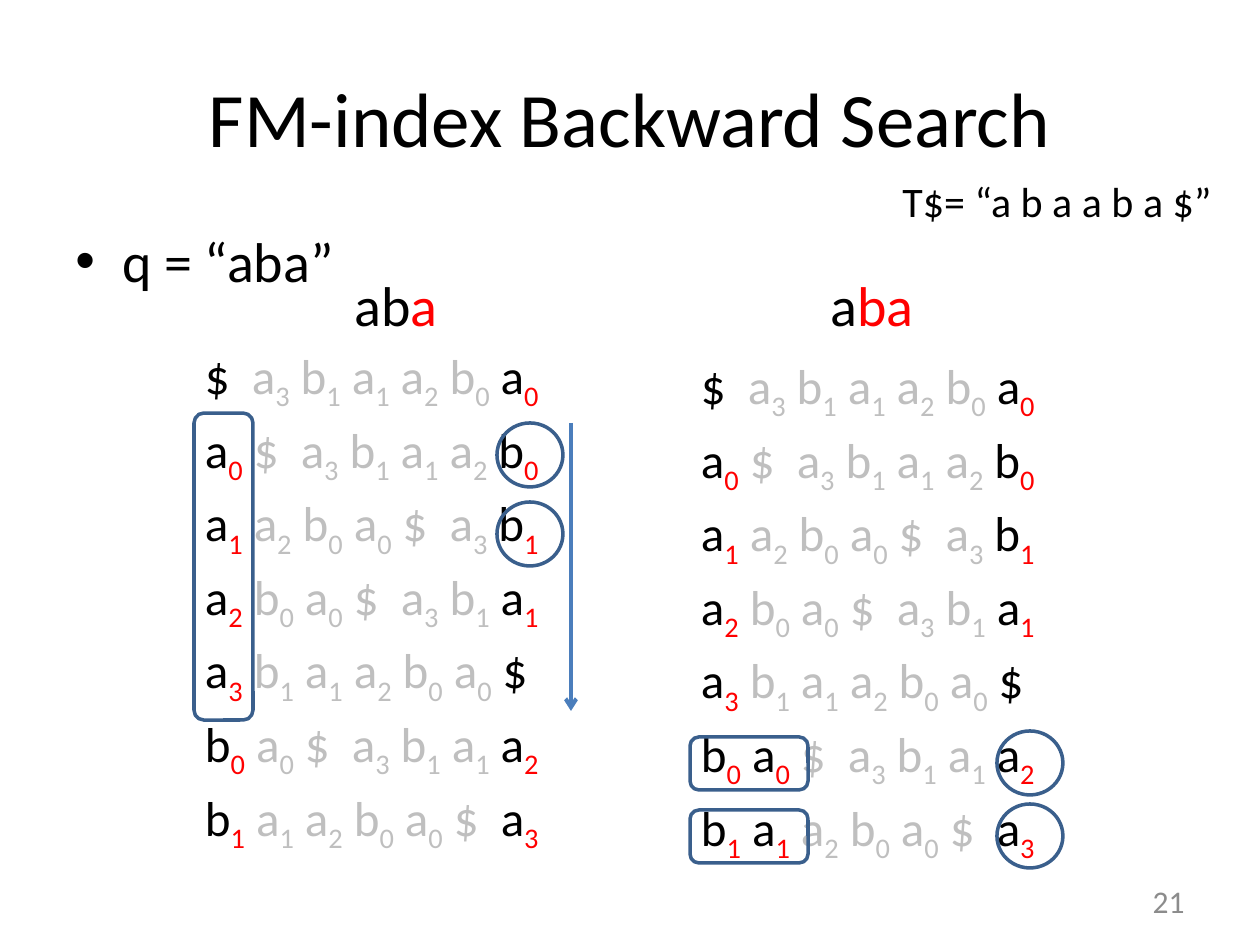
"""Build the FM-index backward search slide."""
import dataclasses

import lxml.etree
import pptx
import pptx.dml.color
import pptx.enum.shapes
import pptx.enum.text
import pptx.oxml.ns
import pptx.util

EMU_PER_PX = 914400 / 126
LEFT = pptx.enum.text.PP_ALIGN.LEFT
RIGHT = pptx.enum.text.PP_ALIGN.RIGHT
CENTER = pptx.enum.text.PP_ALIGN.CENTER
MIDDLE = pptx.enum.text.MSO_ANCHOR.MIDDLE
ROUNDED = pptx.enum.shapes.MSO_SHAPE.ROUNDED_RECTANGLE
OVAL = pptx.enum.shapes.MSO_SHAPE.OVAL

ROTATION = ["$", "a3", "b1", "a1", "a2", "b0", "a0"]
FIRST_COLUMN = ["$", "a0", "a1", "a2", "a3", "b0", "b1"]


@dataclasses.dataclass(frozen=True)
class Theme:
    """Colours, font and type sizes of the slide."""
    font: str = "Calibri"
    ink: str = "000000"
    accent: str = "FF0000"
    faded: str = "BFBFBF"
    number: str = "8C8C8C"
    border: str = "FFFFFF"
    outline: str = "3A5F8C"
    arrow: str = "4B7EBC"
    title: int = 44
    body: int = 32
    matrix: int = 28
    caption: int = 24
    footer: int = 18


THEME = Theme()


def px(length):
    """Turn pixels into EMU."""
    return pptx.util.Emu(round(length * EMU_PER_PX))


def rgb(colour):
    """Turn a hex string into a colour."""
    return pptx.dml.color.RGBColor.from_string(colour)


def add_element(parent, tag, **attributes):
    """Append a DrawingML element to its parent."""
    return lxml.etree.SubElement(parent, pptx.oxml.ns.qn(tag), attributes)


def place(shape, left, top, width, height):
    """Move and size a shape."""
    shape.left, shape.top = px(left), px(top)
    shape.width, shape.height = px(width), px(height)


def style_paragraph(paragraph, size, colour=THEME.ink, align=LEFT):
    """Set the font and alignment of a paragraph."""
    paragraph.alignment = align
    paragraph.font.name = THEME.font
    paragraph.font.size = pptx.util.Pt(size)
    paragraph.font.color.rgb = rgb(colour)


def add_run(paragraph, text, colour, subscript=False):
    """Add a coloured run, lowered where it is a subscript."""
    run = paragraph.add_run()
    run.text = text
    run.font.color.rgb = rgb(colour)
    if subscript:
        run.font._element.set("baseline", "-25000")


def add_title(slide, text):
    """Fill and format the title placeholder."""
    title = slide.shapes.title
    place(title, 63, 38, 1134, 157)
    title.text_frame.text = text
    title.text_frame.vertical_anchor = MIDDLE
    style_paragraph(title.text_frame.paragraphs[0], THEME.title, align=CENTER)


def add_text(slide, box, text, size, colour=THEME.ink, align=LEFT, wrap=True):
    """Add a text box of one paragraph and return the box."""
    shape = slide.shapes.add_textbox(*map(px, box))
    shape.text_frame.word_wrap = wrap
    paragraph = shape.text_frame.paragraphs[0]
    paragraph.text = text
    style_paragraph(paragraph, size, colour, align)
    return shape


def add_bullet(slide, box, text):
    """Add a bulleted line of body text."""
    paragraph = add_text(slide, box, text, THEME.body).text_frame.paragraphs[0]
    paragraph.space_before = pptx.util.Pt(6)
    properties = paragraph._p.get_or_add_pPr()
    properties.set("marL", str(px(47)))
    properties.set("indent", str(-px(47)))
    add_element(properties, "a:buFont", typeface="Arial")
    add_element(properties, "a:buChar", char="•")


def add_query(slide, left, pending, matched):
    """Add the query with its matched suffix highlighted."""
    shape = add_text(slide, (left, 264, 110, 80), pending, THEME.body, wrap=False)
    add_run(shape.text_frame.paragraphs[0], matched, THEME.accent)


def write_rotation(paragraph, first, matched):
    """Write one rotation, with its matched prefix and last symbol dark."""
    start = ROTATION.index(first)
    symbols = ROTATION[start:] + ROTATION[:start]
    gap = ""
    for position, symbol in enumerate(symbols):
        dark = position < matched or position == len(symbols) - 1
        letter, rank = symbol[0], symbol[1:]
        add_run(paragraph, gap + letter, THEME.ink if dark else THEME.faded)
        if rank:
            add_run(paragraph, rank, THEME.accent if dark else THEME.faded,
                    subscript=True)
        gap = " " if rank else "  "


def format_cell(cell):
    """Give a cell thin margins, no fill and white borders."""
    cell.vertical_anchor = MIDDLE
    cell.margin_left = cell.margin_top = cell.margin_right = px(1)
    cell.margin_bottom = 0
    properties = cell._tc.get_or_add_tcPr()
    for side in ("L", "R", "T", "B"):
        line = add_element(properties, f"a:ln{side}", w="12700")
        fill = add_element(line, "a:solidFill")
        add_element(fill, "a:srgbClr", val=THEME.border)
    add_element(properties, "a:noFill")


def add_matrix(slide, left, top, matched):
    """Add the sorted rotations; matched maps a first letter to a prefix length."""
    rows = len(FIRST_COLUMN)
    table = slide.shapes.add_table(
        rows, 1, px(left), px(top), px(397), px(515)).table
    table.first_row = table.horz_banding = False
    for cell, first in zip(table.iter_cells(), FIRST_COLUMN):
        format_cell(cell)
        paragraph = cell.text_frame.paragraphs[0]
        style_paragraph(paragraph, THEME.matrix)
        write_rotation(paragraph, first, matched.get(first[0], 1))


def add_marker(slide, kind, box):
    """Add an unfilled outline around matched symbols."""
    marker = slide.shapes.add_shape(kind, *map(px, box))
    marker.shadow.inherit = False
    marker.fill.background()
    marker.line.color.rgb = rgb(THEME.outline)
    marker.line.width = pptx.util.Pt(2)


def add_arrow(slide, x, top, bottom):
    """Add a downward scan arrow."""
    arrow = slide.shapes.add_connector(
        pptx.enum.shapes.MSO_CONNECTOR.STRAIGHT,
        px(x), px(top), px(x), px(bottom))
    arrow.line.color.rgb = rgb(THEME.arrow)
    arrow.line.width = pptx.util.Pt(2.25)
    add_element(arrow.line._get_or_add_ln(), "a:tailEnd", type="arrow")
    add_element(arrow._element.spPr, "a:effectLst")


def main():
    """Build and save the slide."""
    presentation = pptx.Presentation()
    presentation.slide_width, presentation.slide_height = px(1260), px(945)
    slide = presentation.slides.add_slide(presentation.slide_layouts[5])

    add_title(slide, "FM-index Backward Search")
    add_bullet(slide, (63, 220, 1134, 624), "q = “aba”")
    number = add_text(slide, (903, 876, 294, 50), "21", THEME.footer,
                      THEME.number, RIGHT)
    number.text_frame.vertical_anchor = MIDDLE

    add_matrix(slide, 204, 344, {})
    add_matrix(slide, 700, 354, {"b": 2})

    add_query(slide, 342, "ab", "a")
    add_marker(slide, ROUNDED, (194, 413, 59, 307))
    add_arrow(slide, 571, 423, 711)
    for top in (423, 502):
        add_marker(slide, OVAL, (497, top, 66, 64))
    for top in (737, 810):
        add_marker(slide, ROUNDED, (690, top, 118, 53))
        add_marker(slide, OVAL, (997, top - 6, 66, 64))
    add_query(slide, 818, "a", "ba")
    add_text(slide, (890, 169, 336, 58), "T$= “a b a a b a $”",
             THEME.caption, wrap=False)

    presentation.save("out.pptx")


if __name__ == "__main__":
    main()
